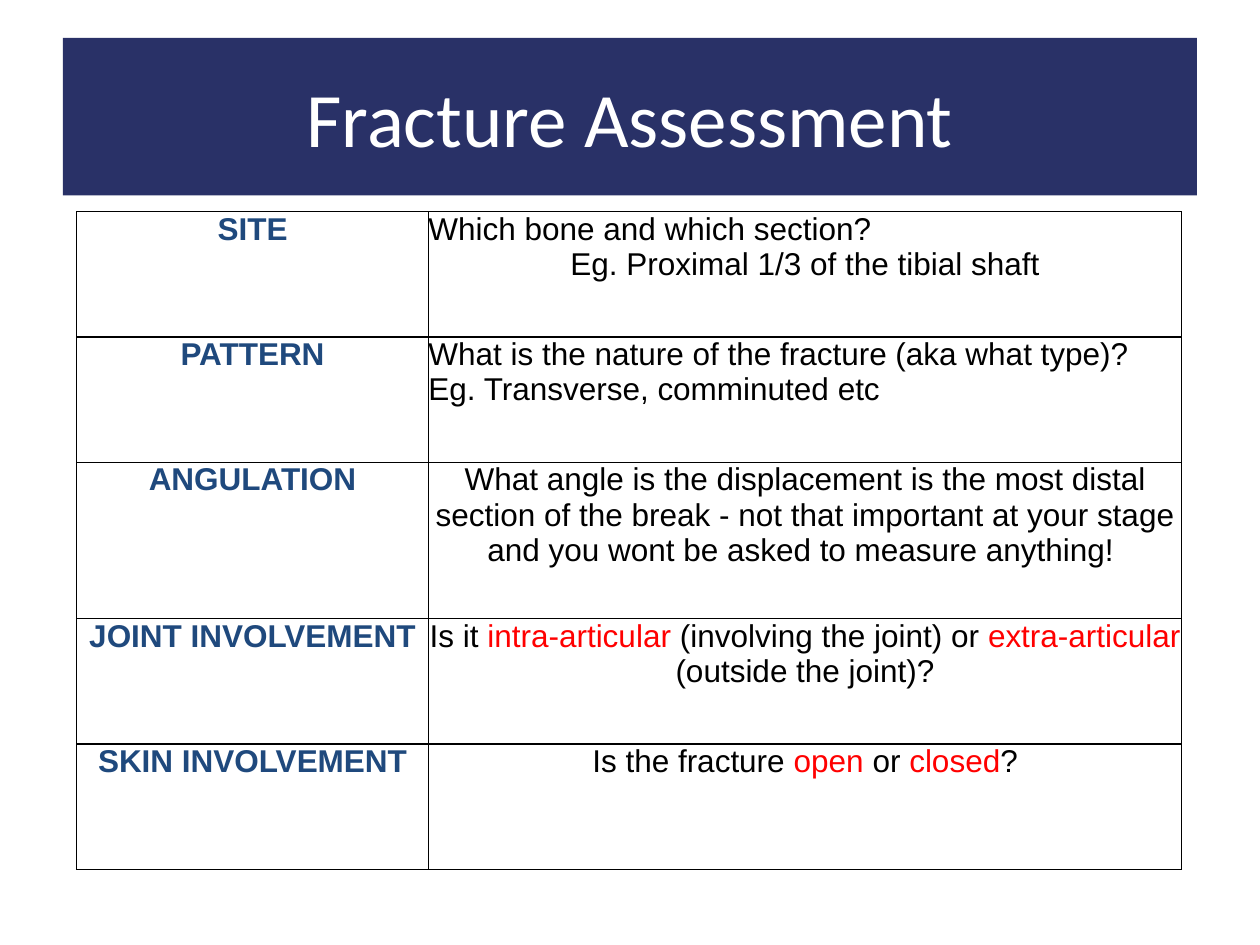
"""Build the Fracture Assessment slide: a title banner above a two-column table."""
from lxml.etree import SubElement
from pptx import Presentation
from pptx.dml.color import RGBColor
from pptx.enum.shapes import MSO_SHAPE
from pptx.enum.text import MSO_ANCHOR, PP_ALIGN
from pptx.oxml.ns import qn
from pptx.util import Inches, Pt

COLORS = {"banner": "293167", "white": "FFFFFF", "label": "1F497D",
          "body": "000000", "accent": "FF0000", "border": "000000"}
LEFT, CENTER = PP_ALIGN.LEFT, PP_ALIGN.CENTER

ROWS = [
    ("SITE", [(LEFT, [("Which bone and which section?", "body")]),
              (CENTER, [("Eg. Proximal 1/3 of the tibial shaft", "body")])]),
    ("PATTERN", [(LEFT, [("What is the nature of the fracture (aka what type)?", "body")]),
                 (LEFT, [("Eg. Transverse, comminuted etc", "body")])]),
    ("ANGULATION", [(CENTER, [("What angle is the displacement is the most distal section "
                               "of the break - not that important at your stage and you "
                               "wont be asked to measure anything! ", "body")])]),
    ("JOINT INVOLVEMENT", [(CENTER, [("Is it ", "body"), ("intra-articular", "accent"),
                                     (" (involving the joint) or ", "body"),
                                     ("extra-articular", "accent"),
                                     (" (outside the joint)?", "body")])]),
    ("SKIN INVOLVEMENT", [(CENTER, [("Is the fracture ", "body"), ("open", "accent"),
                                    (" or ", "body"), ("closed", "accent"), ("?", "body")])]),
]
TABLE_HEIGHT, TALL_ROW = 5.22, 1.24
SHORT_ROW = (TABLE_HEIGHT - TALL_ROW) / (len(ROWS) - 1)


def style_span(span, font, size, color, bold=False):
    span.font.name = font
    span.font.size = Pt(size)
    span.font.bold = bold
    span.font.color.rgb = RGBColor.from_string(COLORS[color])


def fill_cell(cell, paragraphs, bold):
    cell.margin_left = cell.margin_right = cell.margin_top = cell.margin_bottom = 0
    cell.vertical_anchor = MSO_ANCHOR.TOP
    properties = cell._tc.get_or_add_tcPr()
    for side in ("a:lnL", "a:lnR", "a:lnT", "a:lnB"):
        line = SubElement(properties, qn(side), w=str(Pt(0.75)))
        solid = SubElement(line, qn("a:solidFill"))
        SubElement(solid, qn("a:srgbClr"), val=COLORS["border"])
    cell.fill.solid()
    cell.fill.fore_color.rgb = RGBColor.from_string(COLORS["white"])
    for index, (alignment, spans) in enumerate(paragraphs):
        frame = cell.text_frame
        para = frame.add_paragraph() if index else frame.paragraphs[0]
        para.alignment = alignment
        for text, color in spans:
            span = para.add_run()
            span.text = text
            style_span(span, "Arial", 18, color, bold)


deck = Presentation()
deck.slide_width, deck.slide_height = Inches(10), Inches(7.5)
page = deck.slides.add_slide(deck.slide_layouts[6])

banner = page.shapes.add_shape(MSO_SHAPE.RECTANGLE, Inches(0.5), Inches(0.3),
                               Inches(9), Inches(1.25))
banner.shadow.inherit = False
banner.fill.solid()
banner.fill.fore_color.rgb = RGBColor.from_string(COLORS["banner"])
banner.line.fill.background()
title = banner.text_frame
title.text = "Fracture Assessment"
title.word_wrap = True
title.vertical_anchor = MSO_ANCHOR.MIDDLE
title.margin_left = title.margin_right = title.margin_top = title.margin_bottom = Inches(0.1)
title.paragraphs[0].alignment = CENTER
style_span(title.paragraphs[0].runs[0], "Calibri", 44, "white")

table = page.shapes.add_table(len(ROWS), 2, Inches(0.61), Inches(1.68),
                              Inches(8.77), Inches(TABLE_HEIGHT)).table
table.first_row = table.horz_banding = False
table.columns[0].width, table.columns[1].width = Inches(2.79), Inches(5.98)
for row, (label, answer) in zip(table.rows, ROWS):
    row.height = Inches(TALL_ROW if label == "ANGULATION" else SHORT_ROW)
    fill_cell(row.cells[0], [(CENTER, [(label, "label")])], True)
    fill_cell(row.cells[1], answer, False)

deck.save("out.pptx")
